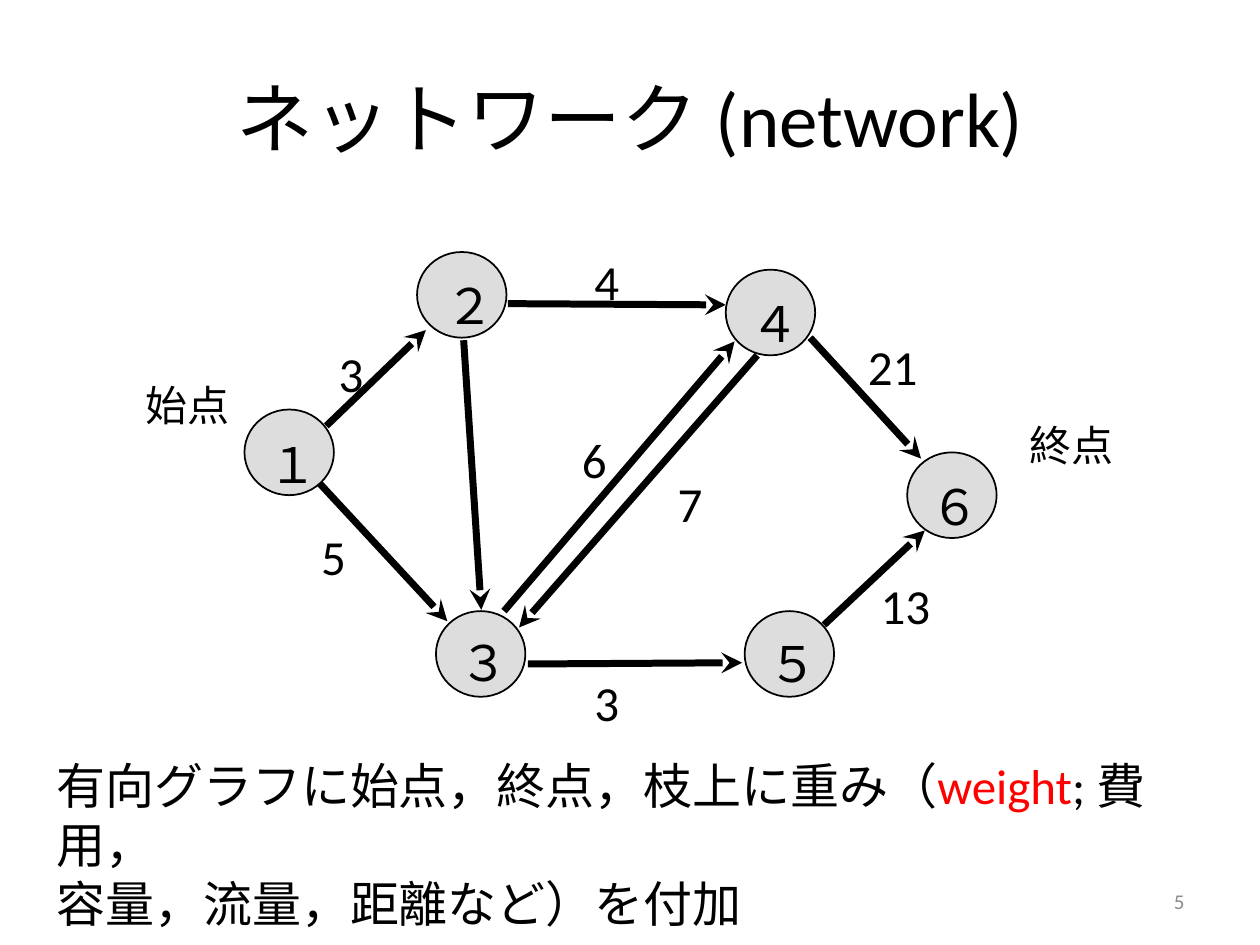
"""Build the slide that introduces a weighted directed network."""
from dataclasses import dataclass

from lxml.etree import SubElement
from pptx import Presentation
from pptx.dml.color import RGBColor
from pptx.enum.shapes import MSO_CONNECTOR, MSO_SHAPE
from pptx.enum.text import MSO_ANCHOR, MSO_AUTO_SIZE, PP_ALIGN
from pptx.oxml.ns import qn
from pptx.util import Pt

EMU_PER_PX = 9144
SLIDE_SIZE = (1000, 750)
NODE_SIZE = (71, 68)
NODE_LABEL_SIZE = (47, 57)


@dataclass(frozen=True)
class Theme:
    """Colours, font and type sizes of the slide."""
    font: str = "Calibri"
    ink: RGBColor = RGBColor(0, 0, 0)
    node: RGBColor = RGBColor(0xDD, 0xDD, 0xDD)
    accent: RGBColor = RGBColor(0xFF, 0, 0)
    muted: RGBColor = RGBColor(0x8C, 0x8C, 0x8C)
    title: int = 44
    body: int = 28
    terminal: int = 24
    footer: int = 12
    outline: int = 1
    edge: int = 4


THEME = Theme()
TITLE = ("ネットワーク (network)", (50, 30, 900, 125))
NODES = [
    ("１", (194, 325), (203, 340)),
    ("２", (331, 200), (344, 214)),
    ("３", (346, 485), (355, 497)),
    ("４", (576, 214), (586, 228)),
    ("５", (591, 485), (600, 498)),
    ("６", (720, 359), (729, 373)),
]
EDGES = [
    ((259, 338), (338, 262)),
    ((403, 241), (576, 242)),
    ((643, 268), (731, 364)),
    ((368, 270), (382, 484)),
    ((254, 384), (355, 493)),
    ((419, 527), (589, 526)),
    ((654, 496), (734, 421)),
    ((400, 485), (583, 271)),
    ((601, 282), (412, 498)),
]
WEIGHTS = [
    ("3", (259, 268, 40, 57)),
    ("5", (245, 413, 40, 57)),
    ("4", (462, 195, 40, 57)),
    ("6", (452, 336, 40, 57)),
    ("7", (528, 371, 40, 57)),
    ("3", (462, 529, 40, 57)),
    ("21", (679, 262, 60, 57)),
    ("13", (689, 452, 60, 57)),
]
TERMINALS = [("始点", (106, 296, 88, 50)), ("終点", (807, 328, 88, 50))]
DEFINITION_BOX = (35, 595, 891, 104)
DEFINITION = [
    [("有向グラフに始点，終点，枝上に重み（", THEME.ink),
     ("weight", THEME.accent), ("; 費用，", THEME.ink)],
    [("容量，流量，距離など）を付加", THEME.ink)],
]
PAGE_NUMBER = ("5", (717, 695, 233, 40))


def emu(lengths):
    return [length * EMU_PER_PX for length in lengths]


def style(paragraph, size, color=THEME.ink):
    paragraph.font.name = THEME.font
    paragraph.font.size = Pt(size)
    paragraph.font.color.rgb = color


def add_text(shapes, text, box, size, color=THEME.ink):
    shape = shapes.add_textbox(*emu(box))
    frame = shape.text_frame
    frame.word_wrap = False
    frame.auto_size = MSO_AUTO_SIZE.SHAPE_TO_FIT_TEXT
    frame.text = text
    style(frame.paragraphs[0], size, color)
    return frame


def add_node(shapes, corner):
    shape = shapes.add_shape(MSO_SHAPE.OVAL, *emu(corner + NODE_SIZE))
    shape.shadow.inherit = False
    shape.fill.solid()
    shape.fill.fore_color.rgb = THEME.node
    shape.line.color.rgb = THEME.ink
    shape.line.width = Pt(THEME.outline)


def add_edge(shapes, start, end):
    connector = shapes.add_connector(MSO_CONNECTOR.STRAIGHT, *emu(start + end))
    connector.line.color.rgb = THEME.ink
    connector.line.width = Pt(THEME.edge)
    properties = connector._element.spPr
    SubElement(properties.find(qn("a:ln")), qn("a:tailEnd"), type="stealth")
    SubElement(properties, qn("a:effectLst"))


def add_graph(slide):
    shapes = slide.shapes.add_group_shape().shapes
    for _, corner, _ in NODES:
        add_node(shapes, corner)
    for start, end in EDGES:
        add_edge(shapes, start, end)
    for label, _, corner in NODES:
        add_text(shapes, label, corner + NODE_LABEL_SIZE, THEME.body)


def add_definition(slide):
    frame = slide.shapes.add_textbox(*emu(DEFINITION_BOX)).text_frame
    frame.word_wrap = True
    for index, runs in enumerate(DEFINITION):
        paragraph = frame.add_paragraph() if index else frame.paragraphs[0]
        style(paragraph, THEME.body)
        for text, color in runs:
            run = paragraph.add_run()
            run.text = text
            run.font.color.rgb = color


def add_title(slide):
    text, box = TITLE
    title = slide.shapes.title
    title.left, title.top, title.width, title.height = emu(box)
    title.text_frame.text = text
    title.text_frame.vertical_anchor = MSO_ANCHOR.MIDDLE
    paragraph = title.text_frame.paragraphs[0]
    paragraph.alignment = PP_ALIGN.CENTER
    style(paragraph, THEME.title)


def add_page_number(slide):
    frame = add_text(slide.shapes, *PAGE_NUMBER, THEME.footer, THEME.muted)
    frame.word_wrap = True
    frame.auto_size = MSO_AUTO_SIZE.NONE
    frame.vertical_anchor = MSO_ANCHOR.MIDDLE
    frame.paragraphs[0].alignment = PP_ALIGN.RIGHT


def main():
    presentation = Presentation()
    presentation.slide_width, presentation.slide_height = emu(SLIDE_SIZE)
    slide = presentation.slides.add_slide(presentation.slide_layouts[5])
    add_title(slide)
    add_graph(slide)
    for text, box in WEIGHTS:
        add_text(slide.shapes, text, box, THEME.body)
    add_definition(slide)
    for text, box in TERMINALS:
        add_text(slide.shapes, text, box, THEME.terminal)
    add_page_number(slide)
    presentation.save("out.pptx")


if __name__ == "__main__":
    main()
